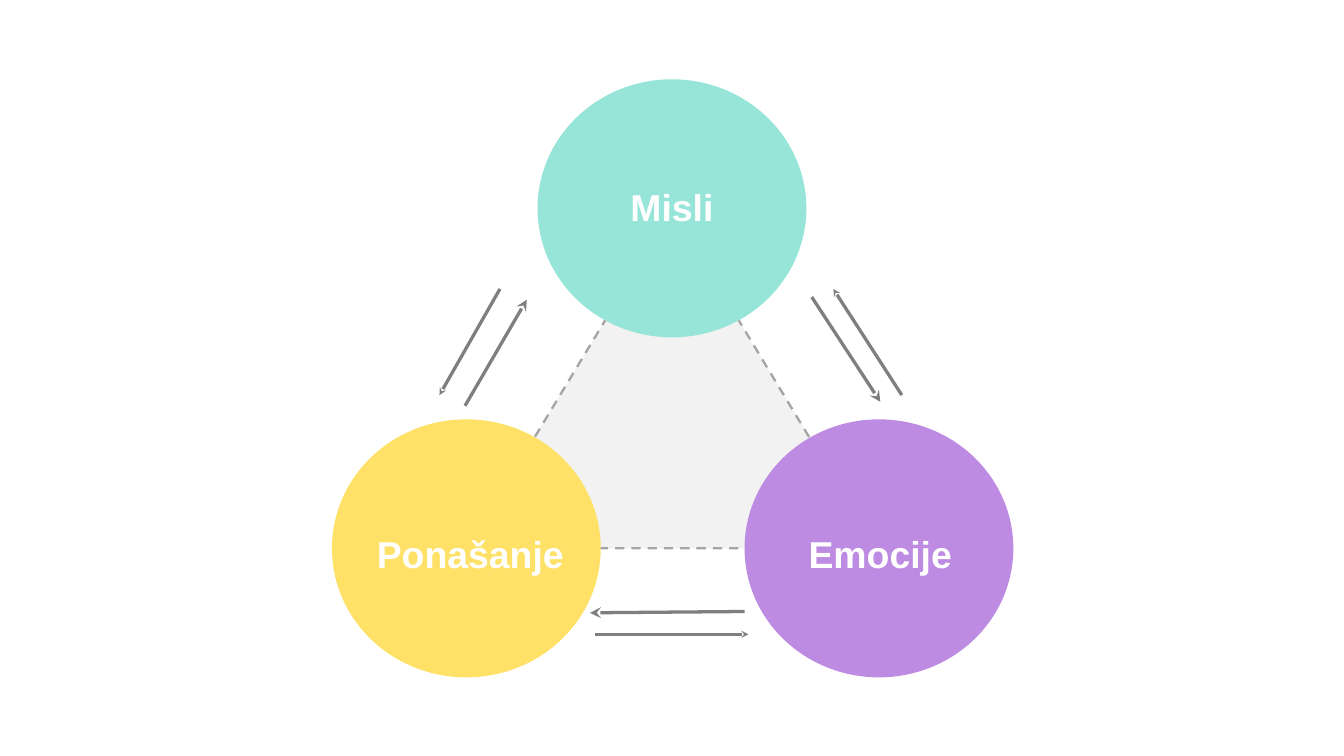
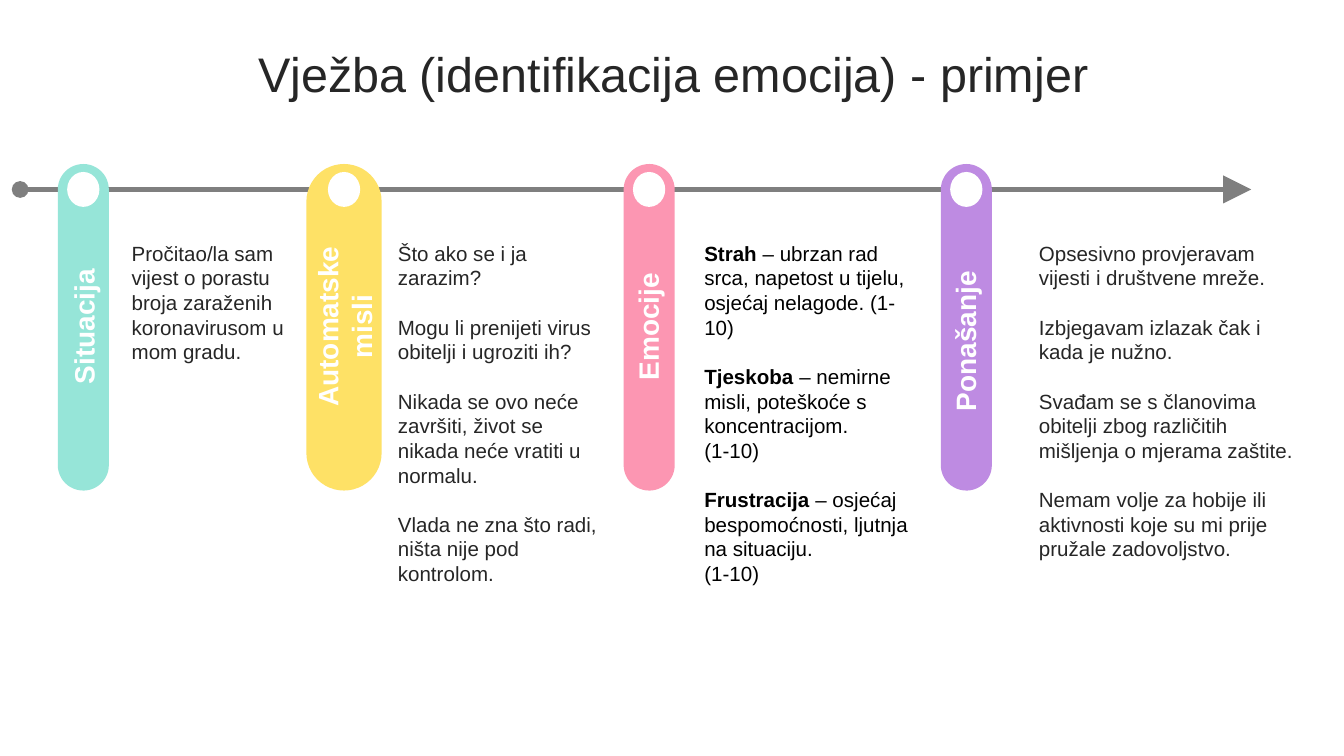
from dataclasses import dataclass
from typing import Optional

from lxml.etree import SubElement
from pptx import Presentation
from pptx.dml.color import RGBColor
from pptx.enum.dml import MSO_LINE
from pptx.enum.shapes import MSO_CONNECTOR, MSO_SHAPE
from pptx.enum.text import MSO_ANCHOR, PP_ALIGN
from pptx.oxml.ns import qn
from pptx.util import Emu, Pt

PX = 9144  # 100 px to the inch
FONT = "Arial"
COLORS = {
    "white": "FFFFFF", "black": "000000", "ink": "262626", "arrow": "7F7F7F",
    "triangle": "F2F2F2", "dash": "A5A5A5",
    "mint": "96E5D8", "yellow": "FEE166", "pink": "FC96B2", "purple": "BE8BE2",
}
SLIDE_WIDTH = 1000
SLIDE_HEIGHT = SLIDE_WIDTH * 9 / 16
TITLE_ONLY, BLANK = 5, 6


@dataclass(frozen=True)
class Circle:
    label: str
    color: str
    left: int
    top: int
    label_left: int
    label_top: int
    label_width: int


@dataclass(frozen=True)
class Arrow:
    start: tuple[int, int]
    end: tuple[int, int]


@dataclass(frozen=True)
class Stage:
    label: str
    color: str
    center: int
    bar_width: int
    label_center: int
    label_length: int
    text_left: int
    text_width: int
    text_height: int
    blocks: tuple[str, ...]
    text_color: str = "ink"
    label_align: PP_ALIGN = PP_ALIGN.CENTER


CIRCLE_WIDTH, CIRCLE_HEIGHT = 200, 192
CIRCLES = (
    Circle("Misli", "mint", 400, 59, 417, 133, 166),
    Circle("Emocije", "purple", 554, 312, 572, 391, 166),
    Circle("Ponašanje", "yellow", 247, 312, 247, 391, 206),
)
# Each arrow points from start to end.
WIDE_ARROWS = (
    Arrow((346, 302), (392, 223)),
    Arrow((604, 221), (655, 299)),
    Arrow((554, 455), (439, 456)),
)
SMALL_ARROWS = (
    Arrow((671, 294), (620, 215)),
    Arrow((372, 215), (327, 294)),
    Arrow((443, 472), (557, 472)),
)

TIMELINE_Y = 141
BAR_TOP, BAR_LENGTH = 122, 243
LABEL_MIDDLE, LABEL_HEIGHT = 243, 35
DOT_WIDTH, DOT_HEIGHT = 24, 26
TEXT_TOP = 175
# A paragraph may open with a bold word, set off by "|".
STAGES = (
    Stage("Ponašanje", "purple", 719, 38, 718, 140, 766, 210, 263, (
        "Opsesivno provjeravam vijesti i društvene mreže.",
        "Izbjegavam izlazak čak i kada je nužno.",
        "Svađam se s članovima obitelji zbog različitih mišljenja o mjerama zaštite.",
        "Nemam volje za hobije ili aktivnosti koje su mi prije pružale zadovoljstvo.",
    ), label_align=PP_ALIGN.LEFT),
    Stage("Emocije", "pink", 483, 38, 482, 114, 517, 168, 267, (
        "Strah| – ubrzan rad srca, napetost u tijelu, osjećaj nelagode. (1-10)",
        "Tjeskoba| – nemirne misli, poteškoće s koncentracijom.\n(1-10)",
        "Frustracija| – osjećaj bespomoćnosti, ljutnja na situaciju.\n(1-10)",
    ), text_color="black"),
    Stage("Automatske misli", "yellow", 256, 56, 256, 162, 289, 169, 282, (
        "Što ako se i ja zarazim?",
        "Mogu li prenijeti virus obitelji i ugroziti ih?",
        "Nikada se ovo neće završiti, život se nikada neće vratiti u normalu.",
        "Vlada ne zna što radi, ništa nije pod kontrolom.",
    )),
    Stage("Situacija", "mint", 62, 38, 62, 146, 91, 147, 100, (
        "Pročitao/la sam vijest o porastu broja zaraženih koronavirusom u mom gradu.",
    )),
)


def px(length: float) -> Emu:
    return Emu(round(length * PX))


def rgb(name: str) -> RGBColor:
    return RGBColor.from_string(COLORS[name])


def write_text(shape, *blocks: str, size: float, color: str, bold: bool = False,
               align: PP_ALIGN = PP_ALIGN.LEFT, anchor: MSO_ANCHOR = MSO_ANCHOR.TOP,
               gap: float = 0, line_spacing: Optional[float] = None) -> None:
    """Fill a shape with blocks of paragraphs, with a gap between the blocks."""
    frame = shape.text_frame
    frame.word_wrap = True
    frame.vertical_anchor = anchor
    frame.margin_left = frame.margin_right = px(7)
    frame.margin_top = frame.margin_bottom = px(4)
    lines = [(line, gap if block_index and not line_index else 0)
             for block_index, block in enumerate(blocks)
             for line_index, line in enumerate(block.split("\n"))]
    for index, (line, space) in enumerate(lines):
        paragraph = frame.add_paragraph() if index else frame.paragraphs[0]
        paragraph.alignment = align
        paragraph.space_before = Pt(space)
        if line_spacing:
            paragraph.line_spacing = line_spacing
        lead, _, rest = line.rpartition("|")
        for part, is_bold in ((lead, True), (rest, bold)):
            if part:
                run = paragraph.add_run()
                run.text = part
                run.font.name = FONT
                run.font.size = Pt(size)
                run.font.bold = is_bold
                run.font.color.rgb = rgb(color)


def add_filled(slide, kind: MSO_SHAPE, left: float, top: float,
               width: float, height: float, color: str):
    shape = slide.shapes.add_shape(kind, px(left), px(top), px(width), px(height))
    shape.shadow.inherit = False
    shape.fill.solid()
    shape.fill.fore_color.rgb = rgb(color)
    shape.line.fill.background()
    return shape


def add_text(slide, left: float, top: float, width: float, height: float,
             *blocks: str, **text_format):
    box = slide.shapes.add_textbox(px(left), px(top), px(width), px(height))
    write_text(box, *blocks, **text_format)
    return box


def add_arrow(slide, arrow: Arrow, weight: float, tip: str,
              tip_size: str = "med", origin: Optional[str] = None) -> None:
    connector = slide.shapes.add_connector(
        MSO_CONNECTOR.STRAIGHT, *(px(value) for value in arrow.start + arrow.end))
    connector.line.color.rgb = rgb("arrow")
    connector.line.width = Pt(weight)
    line = connector.line._get_or_add_ln()
    if origin:
        SubElement(line, qn("a:headEnd"), type=origin)
    SubElement(line, qn("a:tailEnd"), type=tip, w=tip_size, len=tip_size)
    SubElement(connector._element.spPr, qn("a:effectLst"))


def add_circle(slide, circle: Circle) -> None:
    add_filled(slide, MSO_SHAPE.OVAL, circle.left, circle.top,
               CIRCLE_WIDTH, CIRCLE_HEIGHT, circle.color)


def add_circle_label(slide, circle: Circle) -> None:
    add_text(slide, circle.label_left, circle.label_top, circle.label_width, 41,
             circle.label, size=20, color="white", bold=True, align=PP_ALIGN.CENTER)


def add_stage(slide, stage: Stage) -> None:
    """Draw an upright bar with its dot and label, and the text beside it."""
    bar = add_filled(slide, MSO_SHAPE.ROUNDED_RECTANGLE,
                     stage.center - BAR_LENGTH / 2,
                     BAR_TOP + (BAR_LENGTH - stage.bar_width) / 2,
                     BAR_LENGTH, stage.bar_width, stage.color)
    bar.adjustments[0] = 0.5
    bar.rotation = 270
    add_filled(slide, MSO_SHAPE.OVAL, stage.center - DOT_WIDTH / 2,
               TIMELINE_Y - DOT_HEIGHT / 2, DOT_WIDTH, DOT_HEIGHT, "white")
    label = add_text(slide, stage.label_center - stage.label_length / 2,
                     LABEL_MIDDLE - LABEL_HEIGHT / 2, stage.label_length, LABEL_HEIGHT,
                     stage.label, size=15, color="white", bold=True,
                     align=stage.label_align, anchor=MSO_ANCHOR.MIDDLE)
    label.rotation = 270
    add_text(slide, stage.text_left, TEXT_TOP, stage.text_width, stage.text_height,
             *stage.blocks, size=11, color=stage.text_color, gap=13.2)


def build_triangle_slide(presentation) -> None:
    slide = presentation.slides.add_slide(presentation.slide_layouts[BLANK])
    triangle = add_filled(slide, MSO_SHAPE.ISOSCELES_TRIANGLE, 348, 156, 304, 252, "triangle")
    triangle.line.color.rgb = rgb("dash")
    triangle.line.width = Pt(1.25)
    triangle.line.dash_style = MSO_LINE.DASH
    for circle in CIRCLES:
        add_circle(slide, circle)
    for arrow in WIDE_ARROWS:
        add_arrow(slide, arrow, 1.75, "stealth")
    for circle in CIRCLES:
        add_circle_label(slide, circle)
    for arrow in SMALL_ARROWS:
        add_arrow(slide, arrow, 1.75, "stealth", tip_size="sm")


def build_timeline_slide(presentation) -> None:
    slide = presentation.slides.add_slide(presentation.slide_layouts[TITLE_ONLY])
    title = slide.shapes.title
    title.left, title.top, title.width, title.height = map(px, (27, 28, 949, 59))
    write_text(title, "Vježba (identifikacija emocija) - primjer", size=26, color="ink",
               align=PP_ALIGN.CENTER, anchor=MSO_ANCHOR.MIDDLE, line_spacing=0.9)
    add_arrow(slide, Arrow((15, TIMELINE_Y), (931, TIMELINE_Y)), 3, "triangle",
              tip_size="lg", origin="oval")
    for stage in STAGES:
        add_stage(slide, stage)


def main() -> None:
    presentation = Presentation()
    presentation.slide_width = px(SLIDE_WIDTH)
    presentation.slide_height = px(SLIDE_HEIGHT)
    build_triangle_slide(presentation)
    build_timeline_slide(presentation)
    presentation.save("out.pptx")


if __name__ == "__main__":
    main()
